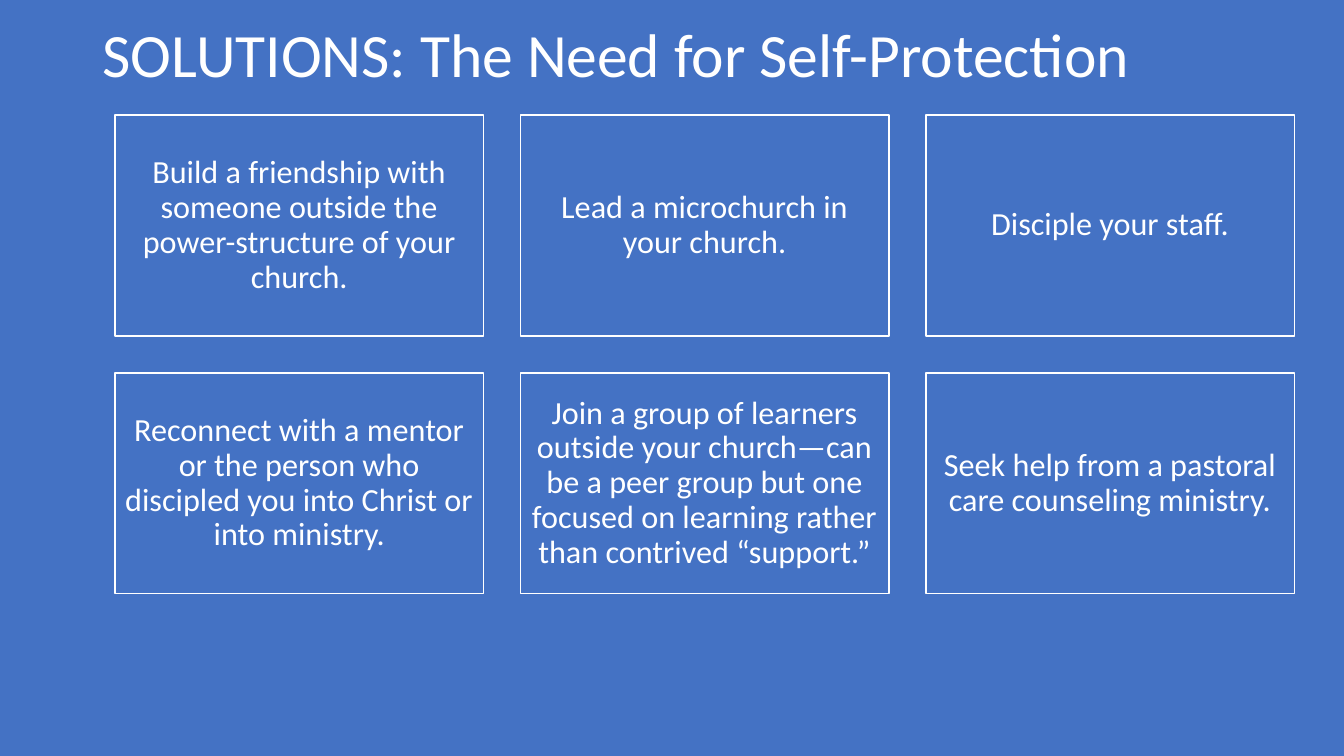
from pptx import Presentation
from pptx import util as u
from pptx.dml import color
from pptx.enum import shapes, text

COLORS = {"blue": "4472C4", "white": "FFFFFF"}
FONT = "Calibri"
TITLE = "SOLUTIONS: The Need for Self-Protection"
SOLUTIONS = [
    "Build a friendship with someone outside the power-structure of your church.",
    "Lead a microchurch in your church.",
    "Disciple your staff.",
    "Reconnect with a mentor or the person who discipled you into Christ or into ministry.",
    "Join a group of learners outside your church—can be a peer group but one "
    "focused on learning rather than contrived “support.”",
    "Seek help from a pastoral care counseling ministry.",
]
COLUMNS, ROWS = 3, 2


def rgb(name):
    return color.RGBColor.from_string(COLORS[name])


def write(frame, words, size, align):
    """Put one white, vertically centred paragraph into a text frame."""
    frame.word_wrap = True
    frame.auto_size = text.MSO_AUTO_SIZE.NONE
    frame.vertical_anchor = text.MSO_ANCHOR.MIDDLE
    para = frame.paragraphs[0]
    para.text = words
    para.alignment = align
    para.line_spacing = 0.9
    para.font.name = FONT
    para.font.size = u.Pt(size)
    para.font.color.rgb = rgb("white")


def place_title(page, left, top, width, height):
    title = page.shapes.title
    title.left, title.top, title.width, title.height = left, top, width, height
    write(title.text_frame, TITLE, 44, text.PP_ALIGN.LEFT)


def add_card(page, words, left, top, width, height):
    card = page.shapes.add_shape(shapes.MSO_SHAPE.RECTANGLE, left, top, width, height)
    card.shadow.inherit = False
    card.fill.solid()
    card.fill.fore_color.rgb = rgb("blue")
    card.line.color.rgb = rgb("white")
    card.line.width = u.Pt(1)
    frame = card.text_frame
    frame.margin_left = frame.margin_right = u.Cm(0.24)
    frame.margin_top = frame.margin_bottom = u.Cm(0.24)
    write(frame, words, 23, text.PP_ALIGN.CENTER)


def add_card_grid(page, left, top, width, height, gap):
    card_width = (width - (COLUMNS - 1) * gap) // COLUMNS
    card_height = (height - (ROWS - 1) * gap) // ROWS
    for index, words in enumerate(SOLUTIONS):
        row, column = divmod(index, COLUMNS)
        add_card(page, words,
                 left + column * (card_width + gap),
                 top + row * (card_height + gap),
                 card_width, card_height)


def main():
    deck = Presentation()
    deck.slide_width, deck.slide_height = u.Cm(33.87), u.Cm(19.05)
    page = deck.slides.add_slide(deck.slide_layouts[5])
    page.background.fill.solid()
    page.background.fill.fore_color.rgb = rgb("blue")
    place_title(page, u.Cm(2.33), u.Cm(0), u.Cm(29.21), u.Cm(2.9))
    add_card_grid(page, u.Cm(2.9), u.Cm(2.9), u.Cm(29.72), u.Cm(12.06), u.Cm(0.93))
    deck.save("out.pptx")


if __name__ == "__main__":
    main()
